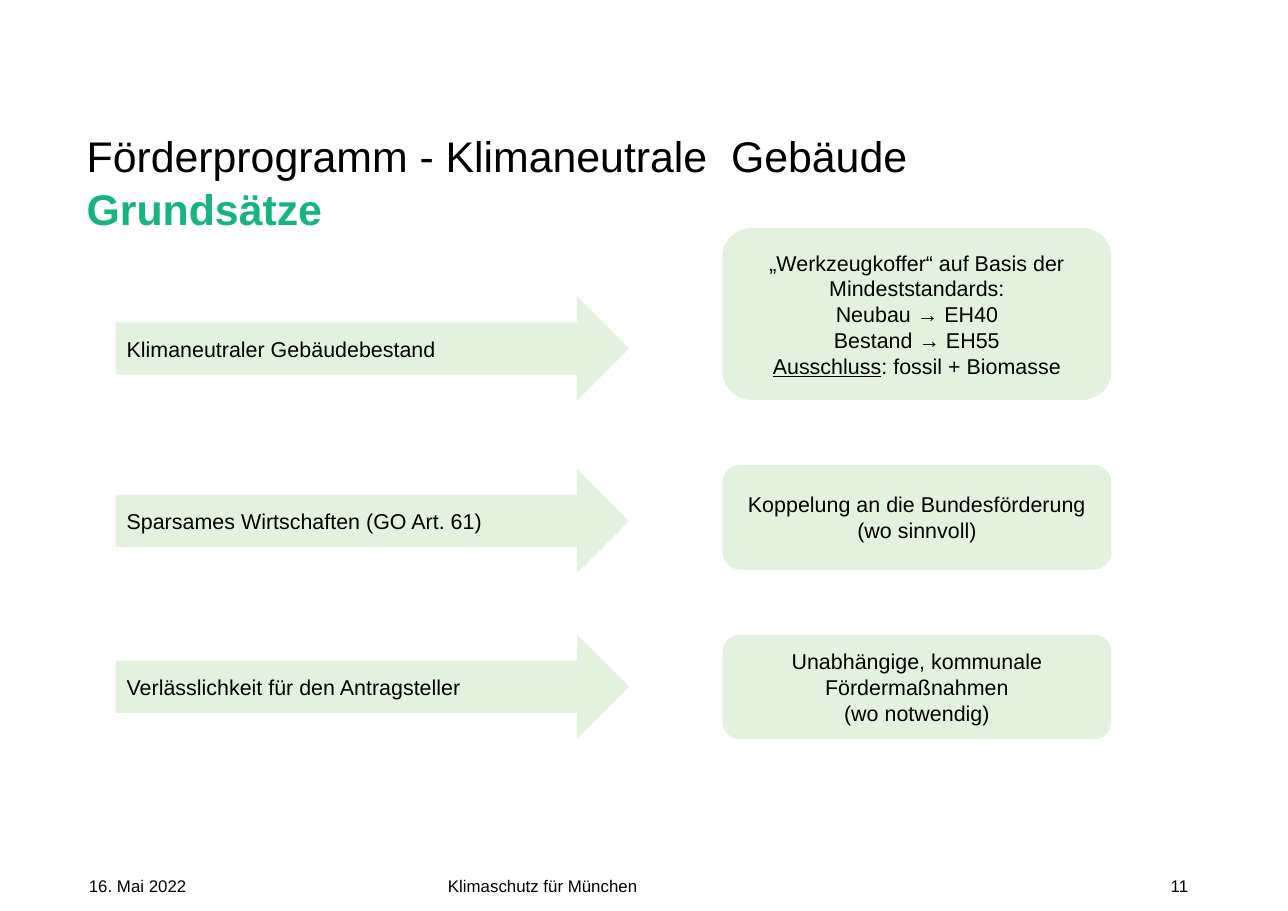
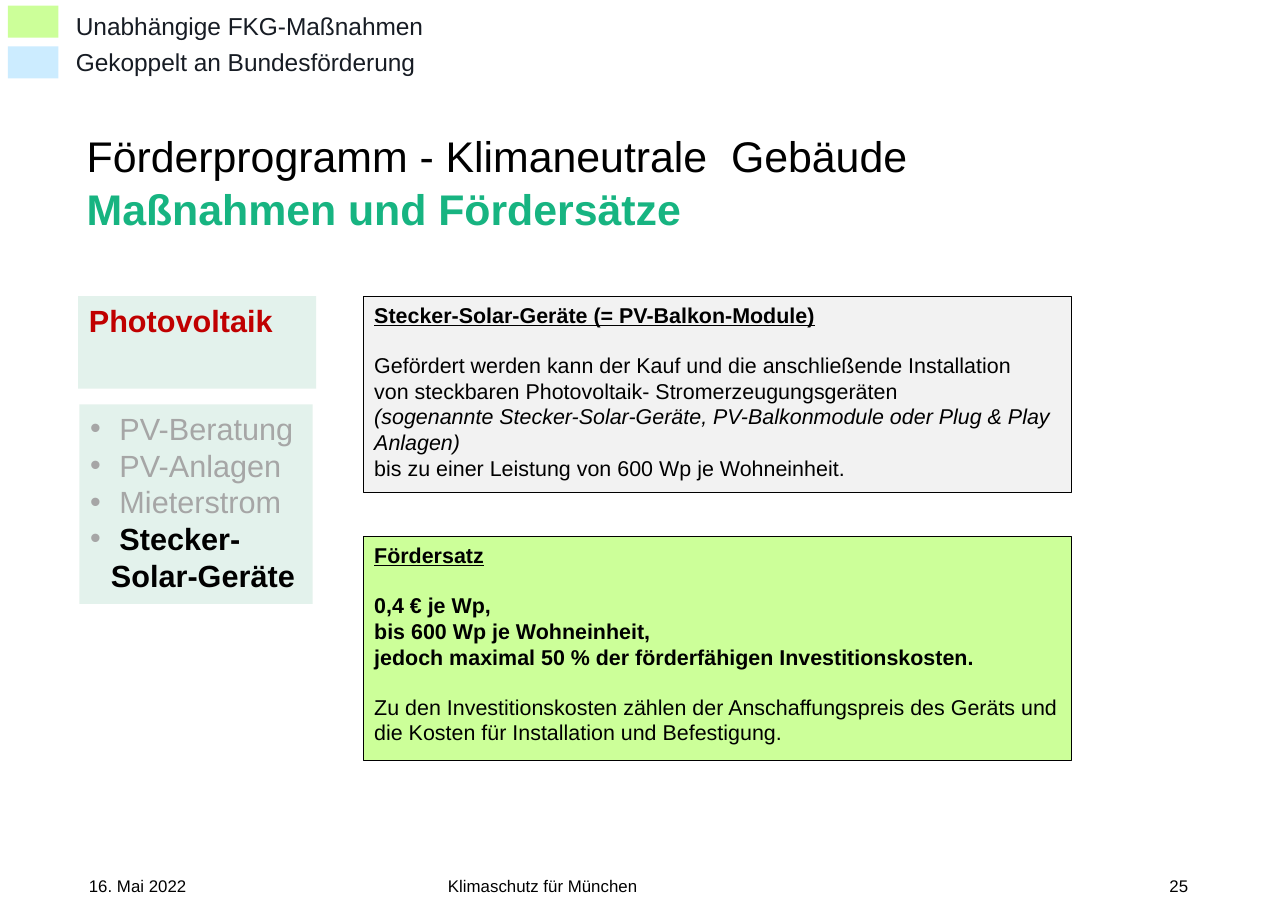
from dataclasses import dataclass
from lxml.etree import SubElement as Sub
from pptx import Presentation
from pptx.dml.color import RGBColor as Rgb
from pptx.enum.shapes import MSO_SHAPE as Shape
from pptx.enum.text import MSO_ANCHOR as Anchor, PP_ALIGN as Align
from pptx.oxml.ns import qn
from pptx.util import Cm, Pt


@dataclass(frozen=True)
class Theme:
    font: str = "Arial"
    black: str = "000000"
    green: str = "17B481"
    leaf: str = "74C15C"
    mint: str = "74C1A2"
    lime: str = "CCFF99"
    sky: str = "CCECFF"
    pale: str = "F2F2F2"
    gray: str = "A6A6A6"
    red: str = "C00000"
    ink: str = "171C24"
    head: int = 28
    large: int = 20
    label: int = 16
    body: int = 14
    foot: int = 11
    gap: int = 16
    tint: int = 20


@dataclass(frozen=True)
class Run:
    text: str
    bold: bool = False
    under: bool = False
    slant: bool = False
    color: str = ""


@dataclass(frozen=True)
class Para:
    runs: tuple
    gap: int = 0


class Deck:
    def __init__(self, theme):
        self.theme = theme
        self.prs = Presentation()
        self.prs.slide_width, self.prs.slide_height = Cm(29.7), Cm(21)
        self.slide = None

    def page(self, topic, number):
        t = self.theme
        self.slide = self.prs.slides.add_slide(self.prs.slide_layouts[6])
        self.title("Förderprogramm - Klimaneutrale  Gebäude", 3, 0.13)
        self.title(Run(topic, bold=True, color=t.green), 4.24, 0.1)
        self.text((1.8, 19.87, 7.7, 1.12), "16. Mai 2022", t.foot, anchor=Anchor.MIDDLE)
        self.text((10.08, 19.87, 15, 1.12), "Klimaschutz für München", t.foot, anchor=Anchor.MIDDLE)
        self.text((25.65, 19.87, 2, 1.12), number, t.foot, Align.RIGHT, Anchor.MIDDLE)

    def title(self, line, top, inset):
        box = self.text((1.8, top, 25.86, 1.24), line, self.theme.head)
        frame = box.text_frame
        frame.margin_left = frame.margin_right = Cm(0.2)
        frame.margin_top = frame.margin_bottom = Cm(inset)
        frame.paragraphs[0].line_spacing = 0.9

    def text(self, area, line, size, align=Align.LEFT, anchor=Anchor.TOP, color=""):
        box = self.slide.shapes.add_textbox(*map(Cm, area))
        self.fill(box, [line], size, align, anchor, color)
        return box

    def shape(self, kind, area, fill, tint=0, line=""):
        item = self.slide.shapes.add_shape(kind, *map(Cm, area))
        item.shadow.inherit = False
        item.fill.solid()
        item.fill.fore_color.rgb = Rgb.from_string(fill)
        if tint:
            tone = item._element.spPr.find(qn("a:solidFill"))[0]
            Sub(tone, qn("a:alpha"), val=str(tint * 1000))
        if line:
            item.line.color.rgb = Rgb.from_string(line)
            item.line.width = Pt(0.75)
        else:
            item.line.fill.background()
        return item

    def fill(self, item, lines, size, align=Align.LEFT, anchor=Anchor.TOP, color="", dots=False):
        frame = item.text_frame
        frame.word_wrap = True
        frame.vertical_anchor = anchor
        for i, line in enumerate(lines):
            par = frame.paragraphs[0] if i == 0 else frame.add_paragraph()
            par.alignment = align
            if not isinstance(line, Para):
                line = Para((line,))
            if line.gap:
                par.space_before = Pt(line.gap)
            if dots:
                self.dot(par)
            for part in line.runs:
                self.add(par, part, size, color)

    def dot(self, par):
        props = par._p.get_or_add_pPr()
        props.set("marL", str(Cm(0.48)))
        props.set("indent", str(-Cm(0.48)))
        Sub(props, qn("a:buFont"), typeface=self.theme.font)
        Sub(props, qn("a:buChar"), char="•")

    def add(self, par, part, size, color):
        if isinstance(part, str):
            part = Run(part)
        run = par.add_run()
        run.text = part.text
        font = run.font
        font.name, font.size = self.theme.font, Pt(size)
        font.bold, font.italic, font.underline = part.bold, part.slant, part.under
        font.color.rgb = Rgb.from_string(part.color or color or self.theme.black)

    def arrow(self, top, line):
        t = self.theme
        item = self.shape(Shape.RIGHT_ARROW, (2.67, top, 11.84, 2.41), t.leaf, t.tint)
        self.fill(item, [line], t.body, anchor=Anchor.MIDDLE)

    def card(self, top, high, lines):
        t = self.theme
        item = self.shape(Shape.ROUNDED_RECTANGLE, (16.66, top, 8.97, high), t.leaf, t.tint)
        self.fill(item, lines, t.body, Align.CENTER, Anchor.MIDDLE)

    def key(self, row, fill, line):
        t = self.theme
        self.shape(Shape.RECTANGLE, (0.18, 0.13 + 0.94 * row, 1.17, 0.74), fill)
        self.text((1.5, 0.13 + 0.84 * row, 8.59, 0.94), line, t.label, color=t.ink)

    def side(self, area, lines, color, dots=False):
        t = self.theme
        item = self.shape(Shape.RECTANGLE, area, t.mint, t.tint)
        self.fill(item, lines, t.large, color=color, dots=dots)

    def panel(self, top, high, fill, lines):
        t = self.theme
        item = self.shape(Shape.RECTANGLE, (8.38, top, 16.33, high), fill, line=t.black)
        item.text_frame.margin_right = 0
        self.fill(item, lines, t.body)


def rules(deck):
    deck.page("Grundsätze", "11")
    rows = [
        (6.83, "Klimaneutraler Gebäudebestand", 5.26, 3.96, [
            "„Werkzeugkoffer“ auf Basis der Mindeststandards:",
            "Neubau → EH40",
            "Bestand → EH55",
            Para((Run("Ausschluss", under=True), ": fossil + Biomasse")),
        ]),
        (10.8, "Sparsames Wirtschaften (GO Art. 61)", 10.72, 2.41, [
            "Koppelung an die Bundesförderung",
            "(wo sinnvoll)",
        ]),
        (14.63, "Verlässlichkeit für den Antragsteller", 14.63, 2.41, [
            "Unabhängige, kommunale Fördermaßnahmen",
            "(wo notwendig)",
        ]),
    ]
    for top, goal, edge, high, lines in rows:
        deck.arrow(top, goal)
        deck.card(edge, high, lines)


def rates(deck):
    t = deck.theme
    deck.page("Maßnahmen und Fördersätze", "25")
    deck.key(0, t.lime, "Unabhängige FKG-Maßnahmen")
    deck.key(1, t.sky, "Gekoppelt an Bundesförderung")
    deck.side((1.8, 6.83, 5.49, 2.13), [Run("Photovoltaik", bold=True)], t.red)
    names = ["PV-Beratung", "PV-Anlagen", "Mieterstrom"]
    last = Run("Stecker-Solar-Geräte", bold=True, color=t.black)
    items = [Para((" ", name)) for name in names + [last]]
    deck.side((1.83, 9.32, 5.38, 4.6), items, t.gray, dots=True)
    deck.panel(6.83, 4.52, t.pale, [
        Run("Stecker-Solar-Geräte (= PV-Balkon-Module)", bold=True, under=True),
        Para(("Gefördert werden kann der Kauf und die anschließende Installation",), t.gap),
        "von steckbaren Photovoltaik- Stromerzeugungsgeräten",
        Run("(sogenannte Stecker-Solar-Geräte, PV-Balkonmodule oder Plug & Play Anlagen)", slant=True),
        "bis zu einer Leistung von 600 Wp je Wohneinheit.",
    ])
    deck.panel(12.37, 5.16, t.lime, [
        Run("Fördersatz", bold=True, under=True),
        Para((Run("0,4 € je Wp,", bold=True),), t.gap),
        Run("bis 600 Wp je Wohneinheit,", bold=True),
        Run("jedoch maximal 50 % der förderfähigen Investitionskosten.", bold=True),
        Para(("Zu den Investitionskosten zählen der Anschaffungspreis des Geräts "
              "und die Kosten für Installation und Befestigung.",), t.gap),
    ])


def main():
    deck = Deck(Theme())
    rules(deck)
    rates(deck)
    deck.prs.save("out.pptx")


if __name__ == "__main__":
    main()
